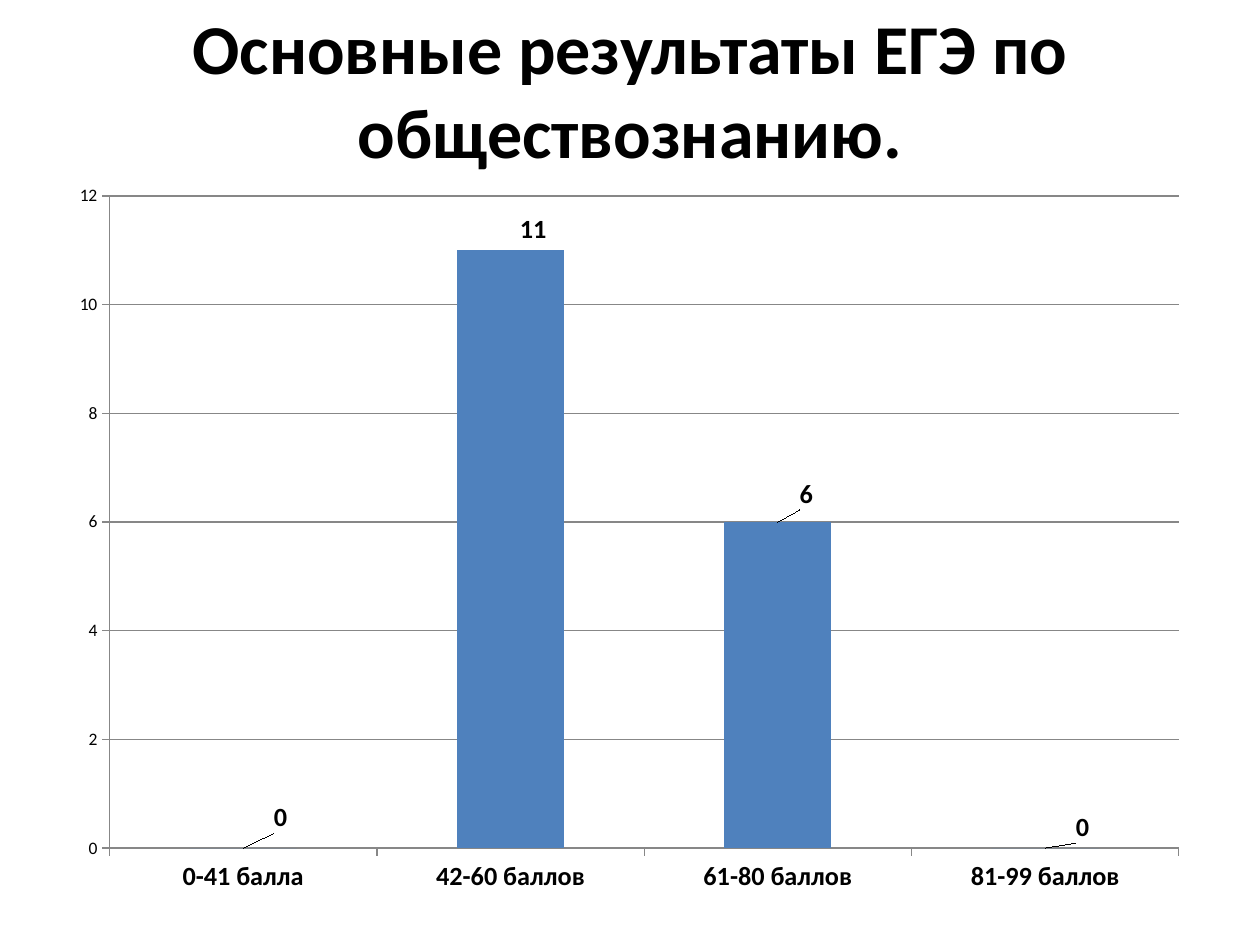
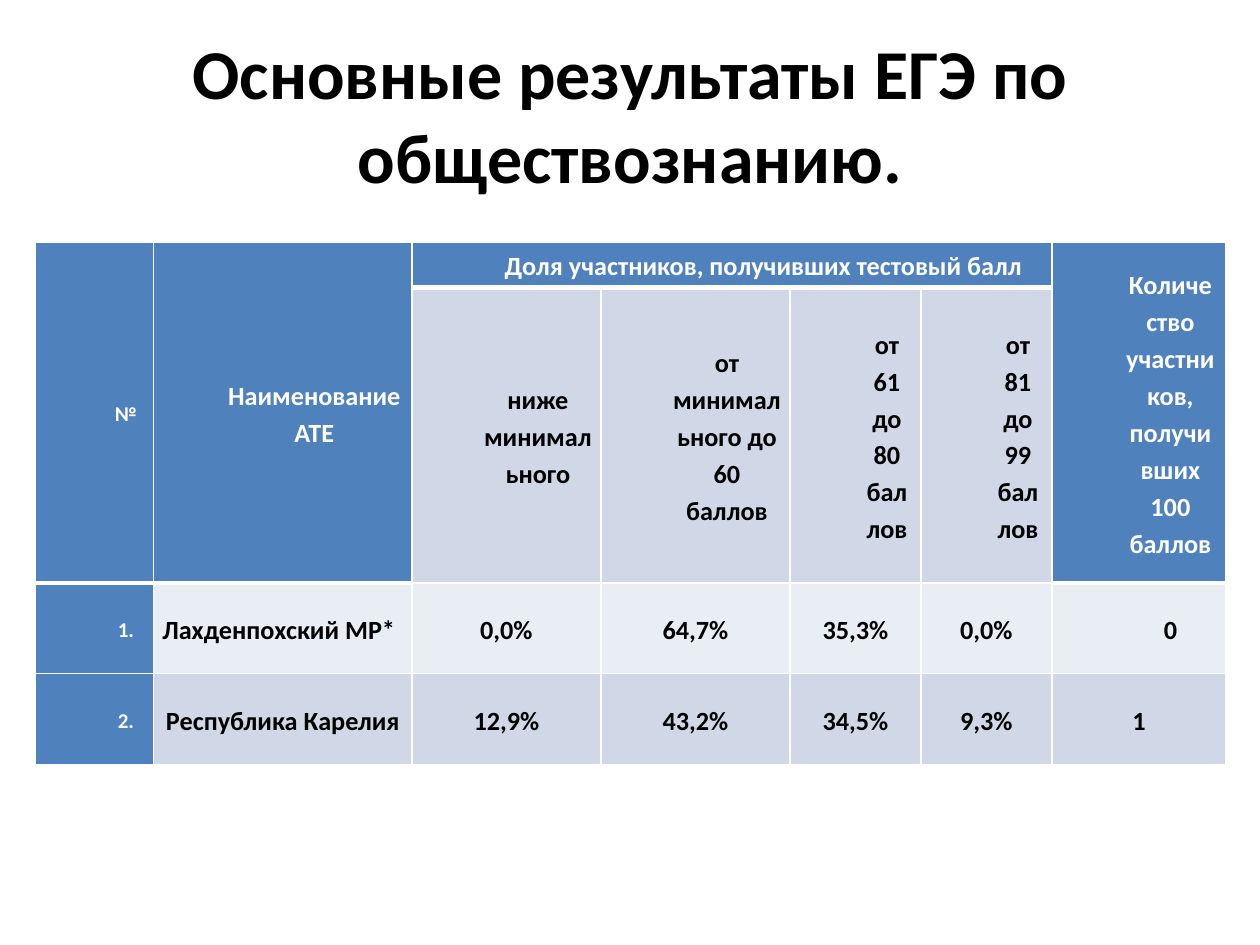
from lxml import etree
from pptx import Presentation
from pptx.chart.data import CategoryChartData
from pptx.dml.color import RGBColor
from pptx.enum.chart import XL_CHART_TYPE, XL_LABEL_POSITION, XL_TICK_MARK
from pptx.enum.text import MSO_ANCHOR, MSO_AUTO_SIZE, PP_ALIGN
from pptx.oxml import parse_xml
from pptx.oxml.ns import nsdecls, qn
from pptx.util import Inches, Pt

COLUMN = XL_CHART_TYPE.COLUMN_CLUSTERED
OUTSIDE_END = XL_LABEL_POSITION.OUTSIDE_END
TICK_OUT = XL_TICK_MARK.OUTSIDE
MIDDLE = MSO_ANCHOR.MIDDLE
NO_FIT = MSO_AUTO_SIZE.NONE
LEFT, CENTER = PP_ALIGN.LEFT, PP_ALIGN.CENTER

FONT = "Calibri"
COLORS = {
    "text": "000000",
    "white": "FFFFFF",
    "blue": "4F81BD",
    "band_dark": "D0D8E8",
    "band_light": "E9EDF4",
    "axis": "878787",
}
TITLE = "Основные результаты ЕГЭ по обществознанию."

# Score chart: category, count, label shift as fractions of the chart
SCORES = [
    ("0-41 балла", 0, (0.033, -0.014)),
    ("42-60 баллов", 11, (0.02, 0)),
    ("61-80 баллов", 6, (0.025, -0.01)),
    ("81-99 баллов", 0, (0.033, 0)),
]

# Results table: None marks a cell covered by a merge
COL_WIDTHS = [0.94, 2.05, 1.5, 1.5, 1.04, 1.04, 1.38]
ROW_HEIGHTS = [0.36, 2.16, 0.72, 0.72]
RESULTS = [
    ["№", "Наименование АТЕ", "Доля участников, получивших тестовый балл",
     None, None, None, "Количество участников, получивших 100 баллов"],
    [None, None, "ниже минимального", "от минимального до 60 баллов",
     "от 61 до 80 баллов", "от 81 до 99 баллов", None],
    ["1.", "Лахденпохский МР*", "0,0%", "64,7%", "35,3%", "0,0%", "0"],
    ["2.", "Республика Карелия", "12,9%", "43,2%", "34,5%", "9,3%", "1"],
]
MERGES = [((0, 0), (1, 0)), ((0, 1), (1, 1)), ((0, 2), (0, 5)), ((0, 6), (1, 6))]


def rgb(name):
    return RGBColor.from_string(COLORS[name])


def is_header(row, col):
    return row == 0 or (row == 1 and col in (0, 1, 6))


def layout_xml(**values):
    parts = "".join(f'<c:{tag} val="{val}"/>' for tag, val in values.items())
    return parse_xml(f'<c:layout {nsdecls("c")}><c:manualLayout>{parts}'
                     '</c:manualLayout></c:layout>')


class Deck:
    def __init__(self):
        self.prs = Presentation()
        self.prs.slide_width, self.prs.slide_height = Inches(10), Inches(7.5)
        self.slide = None

    def style_font(self, font, size, color="text", bold=False):
        font.name, font.size, font.bold = FONT, Pt(size), bold
        font.color.rgb = rgb(color)

    def add_slide(self, title, title_height):
        self.slide = self.prs.slides.add_slide(self.prs.slide_layouts[5])
        sp = self.slide.shapes.title
        sp.left, sp.top = Inches(0.5), Inches(0.52)
        sp.width, sp.height = Inches(9), Inches(title_height)
        tf = sp.text_frame
        tf.text = title
        tf.auto_size, tf.vertical_anchor = NO_FIT, MIDDLE
        tf.margin_bottom = Inches(0.63)
        p = tf.paragraphs[0]
        p.alignment = CENTER
        self.style_font(p.font, 40, bold=True)

    def add_column_chart(self, scores, left, top, width, height):
        data = CategoryChartData()
        data.categories = [name for name, _, _ in scores]
        data.add_series("Series 1", [count for _, count, _ in scores])
        chart = self.slide.shapes.add_chart(
            COLUMN, Inches(left), Inches(top), Inches(width), Inches(height), data).chart
        chart.has_title = chart.has_legend = False
        self.style_font(chart.font, 10)

        # Axes
        category, value = chart.category_axis, chart.value_axis
        value.minimum_scale, value.maximum_scale, value.major_unit = 0, 12, 2
        value.has_major_gridlines = True
        for axis in (category, value):
            axis.major_tick_mark = TICK_OUT
            axis.format.line.color.rgb = rgb("axis")
        value.major_gridlines.format.line.color.rgb = rgb("axis")
        self.style_font(category.tick_labels.font, 15, bold=True)

        # Columns and their labels
        plot = chart.plots[0]
        plot.gap_width, plot.vary_by_categories = 150, False
        series = plot.series[0]
        series.format.fill.solid()
        series.format.fill.fore_color.rgb = rgb("blue")
        for i in range(len(scores)):
            label = series.points[i].data_label
            self.style_font(label.font, 15, bold=True)
            label.position = OUTSIDE_END
        chart_xml = chart._chartSpace
        for label_xml, (_, _, (x, y)) in zip(chart_xml.iter(qn("c:dLbl")), scores):
            label_xml.insert(1, layout_xml(x=x, y=y))

        # Plot area
        area = chart_xml.find(".//" + qn("c:plotArea"))
        for old in area.findall(qn("c:layout")):
            area.remove(old)
        area.insert(0, layout_xml(layoutTarget="inner", xMode="edge", yMode="edge",
                                  x=0.04, y=0.015, w=0.943, h=0.913))

    def set_borders(self, cell, top, bottom):
        tcPr = cell._tc.get_or_add_tcPr()
        for side, width in (("L", 1), ("R", 1), ("T", top), ("B", bottom)):
            ln = etree.SubElement(tcPr, qn("a:ln" + side), w=str(Pt(width)))
            fill = etree.SubElement(ln, qn("a:solidFill"))
            etree.SubElement(fill, qn("a:srgbClr"), val=COLORS["white"])

    def style_cell(self, cell, text, row, col):
        blue = is_header(row, col) or col == 0
        band = "band_light" if row == 2 else "band_dark"
        self.set_borders(cell, 3 if row and is_header(row - 1, col) else 1,
                         3 if is_header(row, col) else 1)
        cell.fill.solid()
        cell.fill.fore_color.rgb = rgb("blue" if blue else band)
        cell.vertical_anchor = MIDDLE
        cell.margin_left = cell.margin_right = Inches(0.07)
        cell.margin_top = cell.margin_bottom = 0
        if text is None:
            return
        cell.text = text
        p = cell.text_frame.paragraphs[0]
        p.alignment = LEFT if (row, col) == (2, 1) else CENTER
        p.line_spacing = 1.15
        if row < 2 or col == 0 or (row, col) == (2, 6):
            p._p.get_or_add_pPr().set("marL", str(Inches(0.5)))
        self.style_font(p.font, 12 if col == 0 else 15,
                        "white" if blue else "text", bold=True)

    def add_table(self, rows, left, top):
        table = self.slide.shapes.add_table(
            len(rows), len(COL_WIDTHS), Inches(left), Inches(top),
            Inches(sum(COL_WIDTHS)), Inches(sum(ROW_HEIGHTS))).table
        table.first_row = table.horz_banding = False
        for column, width in zip(table.columns, COL_WIDTHS):
            column.width = Inches(width)
        for row, height in zip(table.rows, ROW_HEIGHTS):
            row.height = Inches(height)
        for start, end in MERGES:
            table.cell(*start).merge(table.cell(*end))
        for r, texts in enumerate(rows):
            for c, text in enumerate(texts):
                self.style_cell(table.cell(r, c), text, r, c)


def main():
    deck = Deck()

    # Score distribution
    deck.add_slide(TITLE, 0.94)
    deck.add_column_chart(SCORES, 0.51, 1.47, 9, 5.67)

    # Comparison with the region
    deck.add_slide(TITLE, 1.34)
    deck.add_table(RESULTS, 0.28, 1.92)

    deck.prs.save("out.pptx")


if __name__ == "__main__":
    main()
